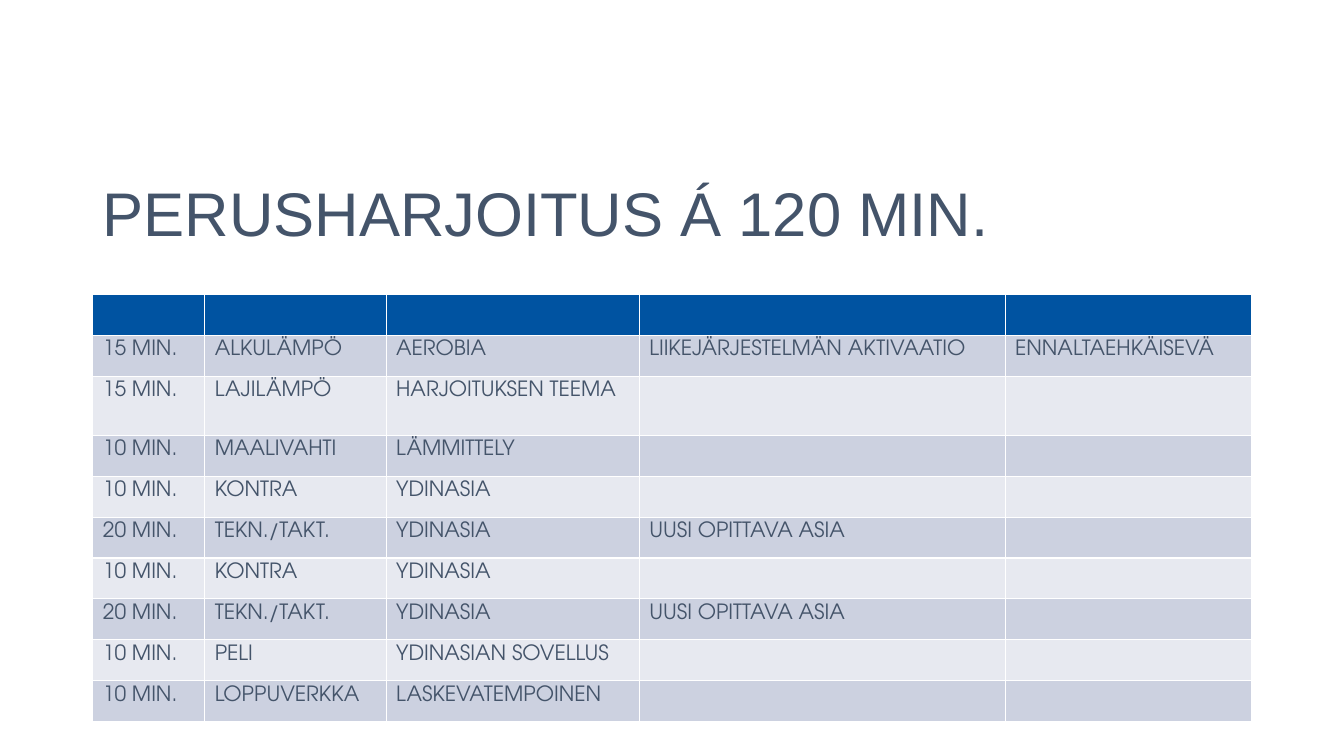
import pptx
import pptx.dml.color
import pptx.enum.text
import pptx.util

Cm = pptx.util.Cm
SLATE = pptx.dml.color.RGBColor(0x44, 0x54, 0x6A)
HEADER_BLUE = pptx.dml.color.RGBColor(0x00, 0x53, 0xA1)
DARK_BAND = pptx.dml.color.RGBColor(0xCC, 0xD1, 0xE0)
LIGHT_BAND = pptx.dml.color.RGBColor(0xE7, 0xE9, 0xF0)

COLUMN_WIDTHS = (2.82, 4.57, 6.38, 9.22, 6.22)
ROW_HEIGHT = 1.03
TALL_ROW_HEIGHT = 1.49
TALL_ROW = 2
EXERCISES = (
    ("15 MIN.", "ALKULÄMPÖ", "AEROBIA", "LIIKEJÄRJESTELMÄN AKTIVAATIO", "ENNALTAEHKÄISEVÄ"),
    ("15 MIN.", "LAJILÄMPÖ", "HARJOITUKSEN TEEMA"),
    ("10 MIN.", "MAALIVAHTI", "LÄMMITTELY"),
    ("10 MIN.", "KONTRA", "YDINASIA"),
    ("20 MIN.", "TEKN./TAKT.", "YDINASIA", "UUSI OPITTAVA ASIA"),
    ("10 MIN.", "KONTRA", "YDINASIA"),
    ("20 MIN.", "TEKN./TAKT.", "YDINASIA", "UUSI OPITTAVA ASIA"),
    ("10 MIN.", "PELI", "YDINASIAN SOVELLUS"),
    ("10 MIN.", "LOPPUVERKKA", "LASKEVATEMPOINEN"),
)


def format_spans(para, font_name, size):
    """Give every run of the paragraph its font, size and colour."""
    for span in para.runs:
        span.font.name = font_name
        span.font.size = pptx.util.Pt(size)
        span.font.color.rgb = SLATE


def add_title(page, left, top, width, height):
    """Place the heading in the given box, centred vertically."""
    box = page.shapes.add_textbox(Cm(left), Cm(top), Cm(width), Cm(height))
    frame = box.text_frame
    frame.word_wrap = True
    frame.vertical_anchor = pptx.enum.text.MSO_ANCHOR.MIDDLE
    frame.text = "PERUSHARJOITUS Á 120 MIN."
    para = frame.paragraphs[0]
    para.line_spacing = 0.9
    format_spans(para, "Arial", 44)


def add_schedule(page, left, top, width, height):
    """Place the banded training schedule in the given box."""
    frame = page.shapes.add_table(
        len(EXERCISES) + 1, len(COLUMN_WIDTHS), Cm(left), Cm(top), Cm(width), Cm(height)
    )
    table = frame.table
    for column, column_width in zip(table.columns, COLUMN_WIDTHS):
        column.width = Cm(column_width)
    for index, row in enumerate(table.rows):
        row.height = Cm(TALL_ROW_HEIGHT if index == TALL_ROW else ROW_HEIGHT)
        band = DARK_BAND if index % 2 else LIGHT_BAND
        for cell in row.cells:
            cell.fill.solid()
            cell.fill.fore_color.rgb = band if index else HEADER_BLUE
    for index, exercise in enumerate(EXERCISES, start=1):
        for column, label in enumerate(exercise):
            cell = table.cell(index, column)
            cell.text_frame.text = label
            format_spans(cell.text_frame.paragraphs[0], "TeX Gyre Adventor", 15)


def main():
    """Build the training session slide and save it."""
    deck = pptx.Presentation()
    deck.slide_width, deck.slide_height = Cm(33.87), Cm(19.05)
    page = deck.slides.add_slide(deck.slide_layouts[6])
    add_title(page, 2.34, 3.86, 29.21, 3.18)
    add_schedule(page, 2.34, 7.42, sum(COLUMN_WIDTHS), 10.76)
    deck.save("out.pptx")


if __name__ == "__main__":
    main()
